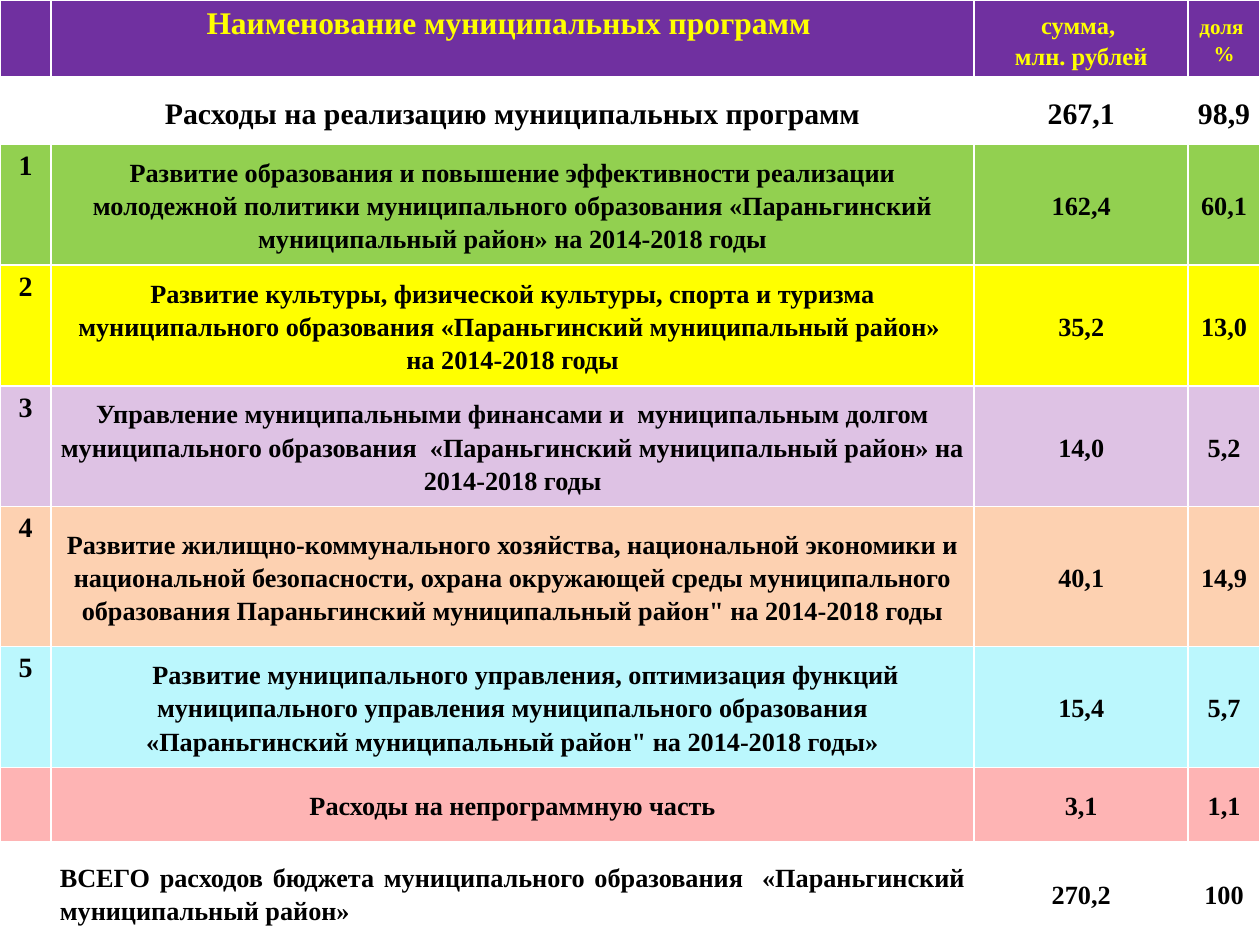
"""Builds a one-page table of municipal programme spending."""
from dataclasses import dataclass
from lxml import etree
from pptx import Presentation
from pptx.dml.color import RGBColor
from pptx.enum.text import MSO_ANCHOR, PP_ALIGN
from pptx.oxml.ns import qn
from pptx.slide import Slide
from pptx.util import Pt

CENTER, JUSTIFY = PP_ALIGN.CENTER, PP_ALIGN.JUSTIFY
TOP, MIDDLE = MSO_ANCHOR.TOP, MSO_ANCHOR.MIDDLE
BLANK_LAYOUT = 6
COLORS = {
    "purple": "7030A0", "white": "FFFFFF", "black": "000000",
    "green": "92D050", "yellow": "FFFF00", "lilac": "DEC2E4",
    "peach": "FDD1B1", "aqua": "BBF7FD", "pink": "FEB4B4",
}
COLUMN_WIDTHS = [29.2, 527.5, 122.3, 41]
ROW_HEIGHTS = [45, 37.5, 69, 69, 69, 80, 69, 42.5, 59]
HEADER = ["", ["Наименование муниципальных программ "],
          ["сумма, ", "млн. рублей"], ["доля ", "%"]]
HEADER_SIZES = [18, 18, 14, 12]
BODY = [
    ("white", "", ["Расходы на реализацию муниципальных программ"], "267,1", "98,9"),
    ("green", "1", ["Развитие образования и повышение эффективности реализации "
                    "молодежной политики муниципального образования «Параньгинский "
                    "муниципальный район» на 2014-2018 годы"], "162,4", "60,1"),
    ("yellow", "2", ["Развитие культуры, физической культуры, спорта и туризма "
                     "муниципального образования «Параньгинский муниципальный район» ",
                     "на 2014-2018 годы"], "35,2", "13,0"),
    ("lilac", "3", ["Управление муниципальными финансами и  муниципальным долгом "
                    "муниципального образования  «Параньгинский муниципальный район» "
                    "на 2014-2018 годы"], "14,0", "5,2"),
    ("peach", "4", ["Развитие жилищно-коммунального хозяйства, национальной экономики "
                    "и национальной безопасности, охрана окружающей среды "
                    "муниципального образования Параньгинский муниципальный район\" "
                    "на 2014-2018 годы"], "40,1", "14,9"),
    ("aqua", "5", ["Развитие муниципального управления, оптимизация функций "
                   "муниципального управления муниципального образования "
                   "«Параньгинский муниципальный район\" на 2014-2018 годы»"], "15,4", "5,7"),
    ("pink", "", ["Расходы на непрограммную часть"], "3,1", "1,1"),
    ("white", "", ["ВСЕГО расходов бюджета муниципального образования  "
                   "«Параньгинский муниципальный район»"], "270,2", "100"),
]


@dataclass
class Painter:
    """Holds the style and the current page."""
    page: Slide
    font: str = "Times New Roman"
    spacing: float = 1.15

    def table(self, widths, heights):
        """Adds an empty table over the whole page."""
        frame = self.page.shapes.add_table(
            len(heights), len(widths), Pt(0), Pt(0), Pt(sum(widths)), Pt(sum(heights)))
        grid = frame.table
        for column, width in zip(grid.columns, widths):
            column.width = Pt(width)
        for row, height in zip(grid.rows, heights):
            row.height = Pt(height)
        return grid

    def cell(self, cell, fill, top=1, bottom=1):
        """Fills a cell and draws its white borders."""
        cell.fill.solid()
        cell.fill.fore_color.rgb = RGBColor.from_string(COLORS[fill])
        properties = cell.fill._xPr
        edges = [("L", 1), ("R", 1), ("T", top), ("B", bottom)]
        for place, (side, width) in enumerate(edges):
            line = etree.Element(qn(f"a:ln{side}"), w=str(Pt(width)))
            solid = etree.SubElement(line, qn("a:solidFill"))
            etree.SubElement(solid, qn("a:srgbClr"), val=COLORS["white"])
            properties.insert(place, line)

    def text(self, cell, lines, size, color="black", align=CENTER, compact=True, indent=0):
        """Writes bold paragraphs into a cell."""
        cell.vertical_anchor = MIDDLE if compact else TOP
        if compact:
            cell.margin_left = cell.margin_right = Pt(5)
            cell.margin_top = cell.margin_bottom = Pt(0)
        for index, line in enumerate(lines):
            frame = cell.text_frame
            para = frame.add_paragraph() if index else frame.paragraphs[0]
            para.alignment = align
            if compact:
                para.line_spacing = self.spacing
            if indent:
                para._p.get_or_add_pPr().set("indent", str(Pt(indent)))
            span = para.add_run()
            span.text = line
            span.font.name = self.font
            span.font.size = Pt(size)
            span.font.bold = True
            span.font.color.rgb = RGBColor.from_string(COLORS[color])


def main():
    """Builds and saves the deck."""
    deck = Presentation()
    deck.slide_width, deck.slide_height = Pt(720), Pt(540)
    painter = Painter(deck.slides.add_slide(deck.slide_layouts[BLANK_LAYOUT]))
    grid = painter.table(COLUMN_WIDTHS, ROW_HEIGHTS)

    for column, (lines, size) in enumerate(zip(HEADER, HEADER_SIZES)):
        cell = grid.cell(0, column)
        painter.cell(cell, "purple", bottom=3)
        if lines:
            painter.text(cell, lines, size, "yellow", compact=column > 1)

    for row, (fill, number, name, amount, share) in enumerate(BODY, start=1):
        size = 17 if row == 1 else 15
        for column in range(len(COLUMN_WIDTHS)):
            painter.cell(grid.cell(row, column), fill, top=3 if row == 1 else 1)
        if number:
            painter.text(grid.cell(row, 0), [number], 16, compact=False)
        painter.text(grid.cell(row, 1), name, size,
                     align=JUSTIFY if row == len(BODY) else CENTER,
                     indent=15 if number == "5" else 0)
        painter.text(grid.cell(row, 2), [amount], size)
        painter.text(grid.cell(row, 3), [share], size)

    deck.save("out.pptx")


if __name__ == "__main__":
    main()
